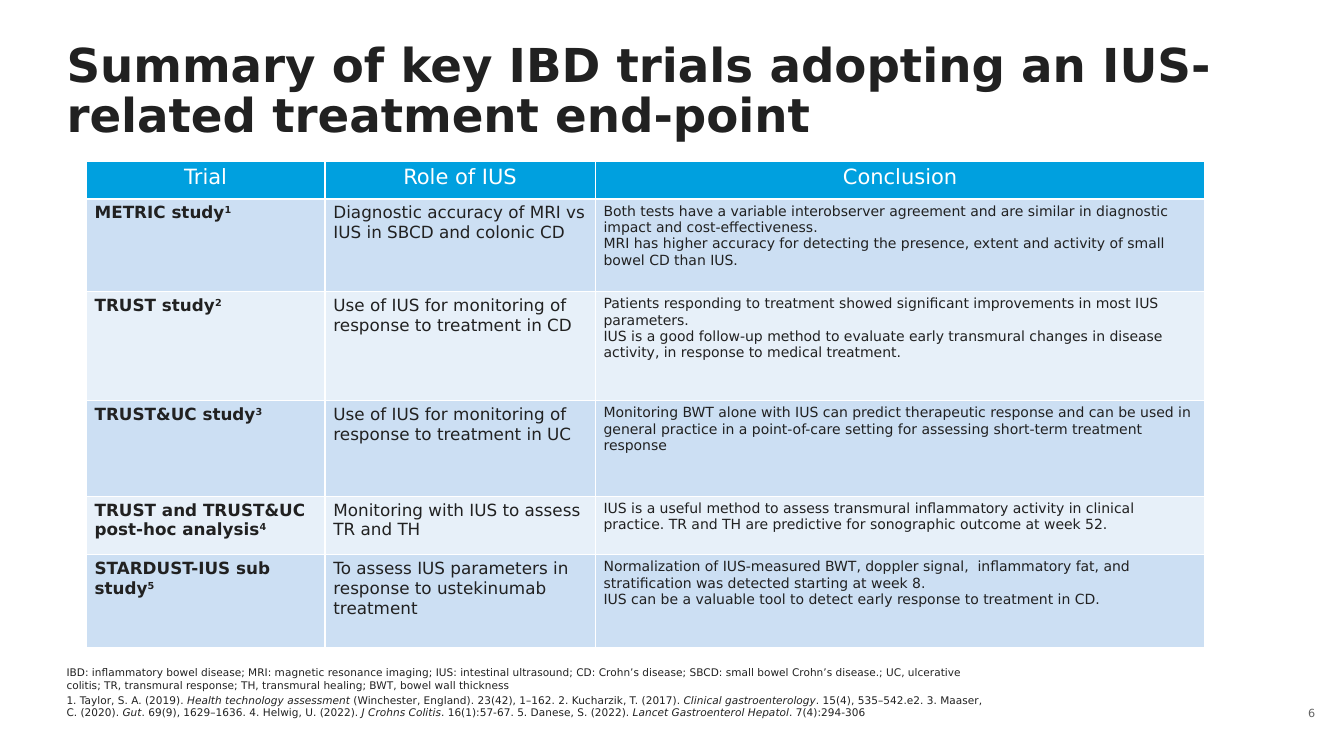
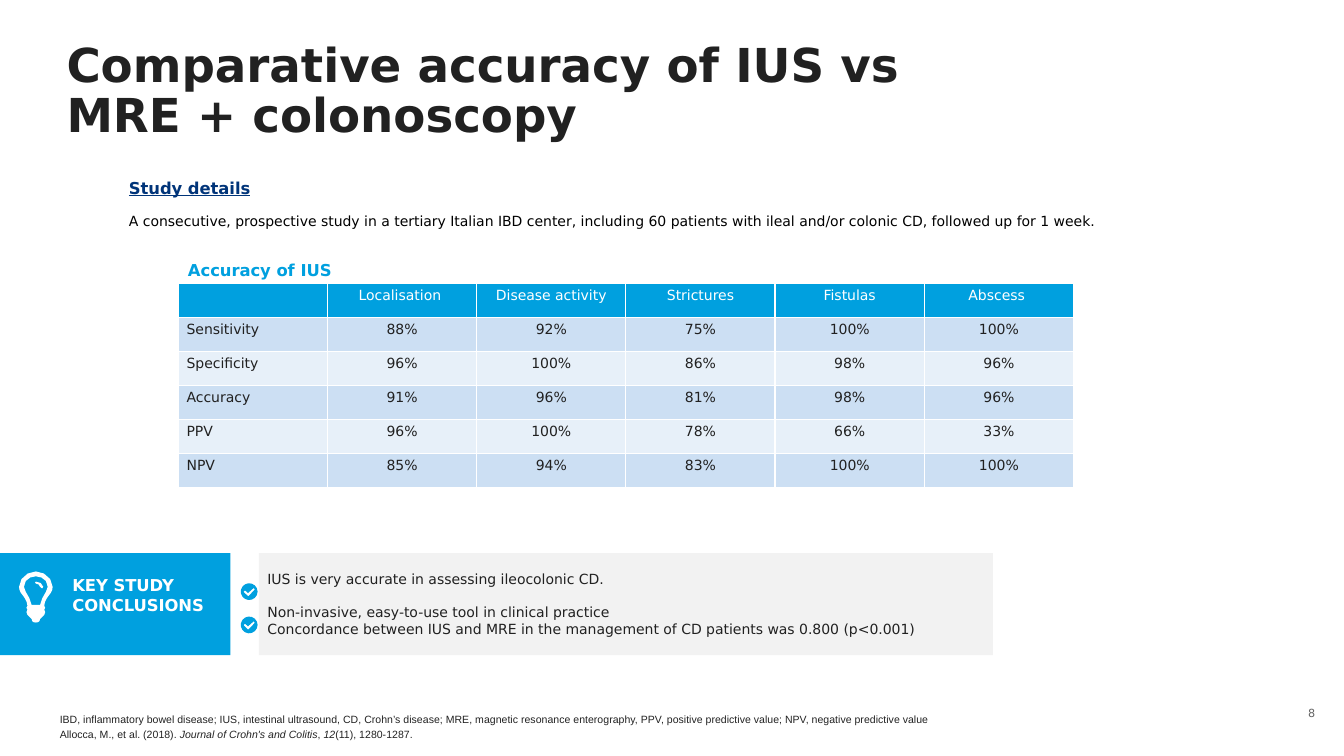
"""Build two slides on intestinal ultrasound trials and diagnostic accuracy."""
import math
from dataclasses import dataclass, replace
from typing import NamedTuple, Sequence

from pptx import Presentation
from pptx import util as u
from pptx.dml.color import RGBColor
from pptx.enum import shapes, text
from pptx.oxml import parse_xml
from pptx.oxml import ns

COLORS = {
    "ink": "212121", "note": "222222", "black": "000000", "white": "FFFFFF",
    "blue": "00A0DF", "navy": "003479", "number": "646464",
    "band_dark": "CCDFF3", "band_light": "E7F0F9", "panel": "F2F2F2",
}
LEFT, CENTER, RIGHT, JUSTIFY = (
    text.PP_ALIGN.LEFT, text.PP_ALIGN.CENTER, text.PP_ALIGN.RIGHT, text.PP_ALIGN.JUSTIFY)
TOP, MIDDLE, BOTTOM = (
    text.MSO_ANCHOR.TOP, text.MSO_ANCHOR.MIDDLE, text.MSO_ANCHOR.BOTTOM)
Point = tuple[float, float]


class Box(NamedTuple):
    left: float
    top: float
    width: float
    height: float


@dataclass(frozen=True)
class Style:
    size: float
    color: str = "ink"
    bold: bool = False
    underline: bool = False
    accent: str = "italic"
    align: text.PP_ALIGN = LEFT
    font: str = "DejaVu Sans"


@dataclass(frozen=True)
class Grid:
    left: float
    top: float
    columns: Sequence[float]
    rows: Sequence[float]
    header: Style
    body: Sequence[Style]


TITLE = Style(33.33, bold=True, accent="none")
FOOTNOTE = Style(7.5)
NUMBER = Style(8, "number", align=RIGHT)
HEADING = Style(11.67, "blue", bold=True)
SMALL = Style(10)
SMALL_CENTERED = replace(SMALL, align=CENTER)
ROLE = Style(12)
TRIAL = replace(ROLE, bold=True, accent="superscript")

TRIAL_GRID = Grid(61.6, 115.2, (170.6, 193, 435.6), (27, 66.2, 77.8, 68.4, 41.8, 66.2),
                  Style(15, "white", align=CENTER), (TRIAL, ROLE, SMALL))
ACCURACY_GRID = Grid(127.3, 202.3, (106.6,) * 6, (24.4,) * 6,
                     replace(SMALL_CENTERED, color="white"), (SMALL,) + (SMALL_CENTERED,) * 5)

TRIALS = (
    ("Trial", "Role of IUS", "Conclusion"),
    ("METRIC study|1", "Diagnostic accuracy of MRI vs IUS in SBCD and colonic CD",
     "Both tests have a variable interobserver agreement and are similar in diagnostic impact "
     "and cost-effectiveness.\nMRI has higher accuracy for detecting the presence, extent and "
     "activity of small bowel CD than IUS."),
    ("TRUST study|2", "Use of IUS for monitoring of response to treatment in CD",
     "Patients responding to treatment showed significant improvements in most IUS parameters.\n"
     "IUS is a good follow-up method to evaluate early transmural changes in disease activity, "
     "in response to medical treatment."),
    ("TRUST&UC study|3", "Use of IUS for monitoring of response to treatment in UC",
     "Monitoring BWT alone with IUS can predict therapeutic response and can be used in general "
     "practice in a point-of-care setting for assessing short-term treatment response"),
    ("TRUST and TRUST&UC post-hoc analysis|4", "Monitoring with IUS to assess TR and TH",
     "IUS is a useful method to assess transmural inflammatory activity in clinical practice. "
     "TR and TH are predictive for sonographic outcome at week 52."),
    ("STARDUST-IUS sub study|5", "To assess IUS parameters in response to ustekinumab treatment",
     "Normalization of IUS-measured BWT, doppler signal,  inflammatory fat, and stratification "
     "was detected starting at week 8.\nIUS can be a valuable tool to detect early response to "
     "treatment in CD."),
)
ACCURACY = (
    ("", "Localisation ", "Disease activity", "Strictures", "Fistulas", "Abscess "),
    ("Sensitivity", "88%", "92%", "75%", "100%", "100%"),
    ("Specificity", "96%", "100%", "86%", "98%", "96%"),
    ("Accuracy", "91%", "96%", "81%", "98%", "96%"),
    ("PPV", "96%", "100%", "78%", "66%", "33%"),
    ("NPV", "85%", "94%", "83%", "100%", "100%"),
)
TRIAL_NOTES = (
    "IBD: inflammatory bowel disease; MRI: magnetic resonance imaging; IUS: intestinal "
    "ultrasound; CD: Crohn’s disease; SBCD: small bowel Crohn’s disease.; UC, ulcerative "
    "colitis; TR, transmural response; TH, transmural healing; BWT, bowel wall thickness\n"
    "1. Taylor, S. A. (2019). |Health technology assessment |(Winchester, England). 23(42), "
    "1–162. 2. Kucharzik, T. (2017). |Clinical gastroenterology|. 15(4), 535–542.e2. 3. Maaser, "
    "C. (2020). |Gut|. 69(9), 1629–1636. 4. Helwig, U. (2022). |J Crohns Colitis|. 16(1):57-67. "
    "5. Danese, S. (2022). |Lancet Gastroenterol Hepatol|. 7(4):294-306"
)
ACCURACY_NOTES = (
    "IBD, inflammatory bowel disease; IUS, intestinal ultrasound, CD, Crohn’s disease; MRE, "
    "magnetic resonance enterography, PPV, positive predictive value; NPV, negative predictive "
    "value\nAllocca, M., et al. (2018). |Journal of Crohn's and Colitis|, |12|(11), 1280-1287."
)
CONCLUSIONS = (
    "IUS is very accurate in assessing ileocolonic CD.\n"
    "Non-invasive, easy-to-use tool in clinical practice\n"
    "Concordance between IUS and MRE in the management of CD patients was 0.800 (p<0.001)"
)

BULB_HALF = (
    ((18, 0), (24, 5), (24, 11)), ((24, 13.5), (23, 15), (21, 17.5)),
    ((20, 19), (18, 21.5), (18, 24.5)), ((18.7, 26),), ((18, 27.4),), ((18.7, 29),), ((18, 31),),
    ((15, 34),), ((15, 36), (13.5, 36.5), (12, 36.5)),
)
GLASS_HALF = (
    ((16, 3.5), (20.5, 6), (20.5, 11)), ((20.5, 14), (15.5, 19), (15, 24)),
)
GLINT = [(16.5, 12.2), (15, 11), (14, 9.3), (12, 8.7), (11.5, 8), (12, 7.3),
         (15.5, 8.3), (17.3, 11)]
TICK = [(5.2, 7), (3, 5.1), (2, 6.2), (5.3, 9.4), (10.1, 4.5), (9.2, 3.4)]


def rgb(name: str) -> RGBColor:
    return RGBColor.from_string(COLORS[name])


def points(values: Sequence[float]) -> list[u.Length]:
    return [u.Pt(value) for value in values]


def write(text_frame, content: str, style: Style) -> None:
    """Write lines of text in which | switches the accent of the style on and off."""
    text_frame.word_wrap = True
    for index, line in enumerate(content.split("\n")):
        paragraph = text_frame.paragraphs[0] if index == 0 else text_frame.add_paragraph()
        parts = line.split("|")
        paragraph.text = parts[0]
        for part in parts[1:]:
            paragraph.add_run().text = part
        paragraph.alignment = style.align
        for position, run in enumerate(paragraph.runs):
            accent = style.accent if position % 2 else "none"
            run.font.name = style.font
            run.font.size = u.Pt(style.size)
            run.font.bold = style.bold
            run.font.underline = style.underline
            run.font.italic = accent == "italic"
            run.font.color.rgb = rgb(style.color)
            if accent == "superscript":
                run.font._element.set("baseline", "30000")


def set_margins(target, horizontal: float, vertical: float) -> None:
    target.margin_left = target.margin_right = u.Pt(horizontal)
    target.margin_top = target.margin_bottom = u.Pt(vertical)


def place(shape, box: Box) -> None:
    shape.left, shape.top, shape.width, shape.height = points(box)


def fill_placeholder(shape, box: Box, content: str, style: Style, anchor) -> None:
    place(shape, box)
    frame = shape.text_frame
    write(frame, content, style)
    set_margins(frame, 0, 0)
    frame.vertical_anchor = anchor
    frame.auto_size = text.MSO_AUTO_SIZE.NONE


def add_text(slide, box: Box, content: str, style: Style, anchor=TOP) -> None:
    frame = slide.shapes.add_textbox(*points(box)).text_frame
    write(frame, content, style)
    frame.vertical_anchor = anchor


def paint(shape, color: str) -> None:
    shape.shadow.inherit = False
    shape.fill.solid()
    shape.fill.fore_color.rgb = rgb(color)
    shape.line.fill.background()


def add_panel(slide, box: Box, color: str):
    shape = slide.shapes.add_shape(shapes.MSO_SHAPE.RECTANGLE, *points(box))
    paint(shape, color)
    return shape


def add_slide(presentation, title: str, title_width: float, number: int,
              notes: str, notes_box: Box, notes_style: Style):
    """Add a slide with its title, footnotes and slide number."""
    slide = presentation.slides.add_slide(presentation.slide_layouts[1])
    fill_placeholder(slide.shapes.title, Box(47.5, 30, title_width, 72.7), title, TITLE, TOP)
    slide.shapes.title.text_frame.paragraphs[0].line_spacing = 0.9
    body = slide.placeholders[1]
    fill_placeholder(body, notes_box, notes, notes_style, BOTTOM)
    for index, paragraph in enumerate(body.text_frame.paragraphs):
        properties = paragraph._p.get_or_add_pPr()
        properties.set("marL", "0")
        properties.set("indent", "0")
        properties.append(parse_xml(f"<a:buNone {ns.nsdecls('a')}/>"))
        paragraph.space_before = u.Pt(1.7 if index else 0)
    add_text(slide, Box(916.3, 496, 30.2, 26), str(number), NUMBER, MIDDLE)
    return slide


def format_cell(cell, content: str, style: Style, fill: str) -> None:
    write(cell.text_frame, content, style)
    if not content:
        paragraph = cell.text_frame.paragraphs[0]
        paragraph._p.get_or_add_endParaRPr().set("sz", str(int(style.size * 100)))
    set_margins(cell, 6, 3)
    properties = cell._tc.get_or_add_tcPr()
    for side in "LRTB":
        properties.append(parse_xml(
            f'<a:ln{side} {ns.nsdecls("a")} w="{u.Pt(1)}"><a:solidFill>'
            f'<a:srgbClr val="{COLORS["white"]}"/></a:solidFill></a:ln{side}>'))
    cell.fill.solid()
    cell.fill.fore_color.rgb = rgb(fill)


def add_grid(slide, grid: Grid, data: Sequence[Sequence[str]]) -> None:
    box = Box(grid.left, grid.top, sum(grid.columns), sum(grid.rows))
    table = slide.shapes.add_table(len(grid.rows), len(grid.columns), *points(box)).table
    for column, width in zip(table.columns, grid.columns):
        column.width = u.Pt(width)
    for row_index, (row, height) in enumerate(zip(table.rows, grid.rows)):
        row.height = u.Pt(height)
        header = row_index == 0
        fill = "blue" if header else ("band_light", "band_dark")[row_index % 2]
        for cell, content, body in zip(row.cells, data[row_index], grid.body):
            format_cell(cell, content, grid.header if header else body, fill)


def trace(start: Point, segments: Sequence[Sequence[Point]], steps: int = 3) -> list[Point]:
    """Turn lines and cubic curves into a list of points."""
    outline = [start]
    for segment in segments:
        if len(segment) == 1:
            outline.append(segment[0])
            continue
        controls = (outline[-1], *segment)
        for step in range(1, steps + 1):
            t = step / steps
            weights = [math.comb(3, k) * t ** k * (1 - t) ** (3 - k) for k in range(4)]
            outline.append(tuple(
                sum(weight * control[axis] for weight, control in zip(weights, controls))
                for axis in (0, 1)))
    return outline


def mirror(half: list[Point], axis: float) -> list[Point]:
    return half + [(2 * axis - x, y) for x, y in reversed(half) if x != axis]


def add_icon(slide, left: float, top: float, contours: Sequence[list[Point]], color: str) -> None:
    scaled = [[(x * 100, y * 100) for x, y in contour] for contour in contours]
    builder = slide.shapes.build_freeform(*scaled[0][0], scale=u.Pt(0.01))
    for index, contour in enumerate(scaled):
        if index:
            builder.move_to(*contour[0])
        builder.add_line_segments(contour[1:], close=True)
    paint(builder.convert_to_shape(u.Pt(left), u.Pt(top)), color)


def add_conclusions(slide) -> None:
    """Add the key conclusions band with its icons."""
    add_panel(slide, Box(0, 395, 164.7, 73), "blue")
    bulb = mirror(trace((12, 0), BULB_HALF), 12)
    glass = mirror(trace((12, 3.5), GLASS_HALF), 12)[::-1]
    add_icon(slide, 13.6, 408.2, (bulb, glass, GLINT), "white")
    add_text(slide, Box(44.6, 407.3, 118, 35.3), "KEY STUDY CONCLUSIONS",
             replace(HEADING, color="white"))
    frame = add_panel(slide, Box(185, 395, 524.2, 73), "panel").text_frame
    write(frame, CONCLUSIONS, SMALL)
    set_margins(frame, 6, 3)
    frame.vertical_anchor = MIDDLE
    frame.paragraphs[1].space_before = u.Pt(11.6)
    angles = [math.radians(degree) for degree in range(0, 360, 24)]
    disc = [(6 + 6 * math.cos(angle), 6 + 6 * math.sin(angle)) for angle in angles]
    for index in range(2):
        add_icon(slide, 172, 416.6 + 23.8 * index, (disc, TICK), "blue")


def main() -> None:
    presentation = Presentation()
    presentation.slide_width, presentation.slide_height = u.Pt(960), u.Pt(540)
    trials = add_slide(presentation,
                       "Summary of key IBD trials adopting an IUS-related treatment end-point",
                       838.8, 6, TRIAL_NOTES, Box(47.5, 471.5, 660.2, 42), FOOTNOTE)
    add_grid(trials, TRIAL_GRID, TRIALS)
    accuracy = add_slide(presentation, "Comparative accuracy of IUS vs \vMRE + colonoscopy",
                         799.2, 8, ACCURACY_NOTES, Box(42.7, 507.5, 660.2, 21.6),
                         replace(FOOTNOTE, color="note", font="Arial"))
    add_text(accuracy, Box(85, 123.8, 211.7, 21.6), "Study details",
             replace(HEADING, color="navy", underline=True))
    add_text(accuracy, Box(85, 148.3, 830.9, 19.4),
             "A consecutive, prospective study in a tertiary Italian IBD center, including 60 "
             "patients with ileal and/or colonic CD, followed up for 1 week.",
             replace(SMALL, color="black", align=JUSTIFY))
    add_grid(accuracy, ACCURACY_GRID, ACCURACY)
    add_text(accuracy, Box(127.2, 182.2, 277.2, 21.6), "Accuracy of IUS", HEADING)
    add_conclusions(accuracy)
    presentation.save("out.pptx")


if __name__ == "__main__":
    main()
